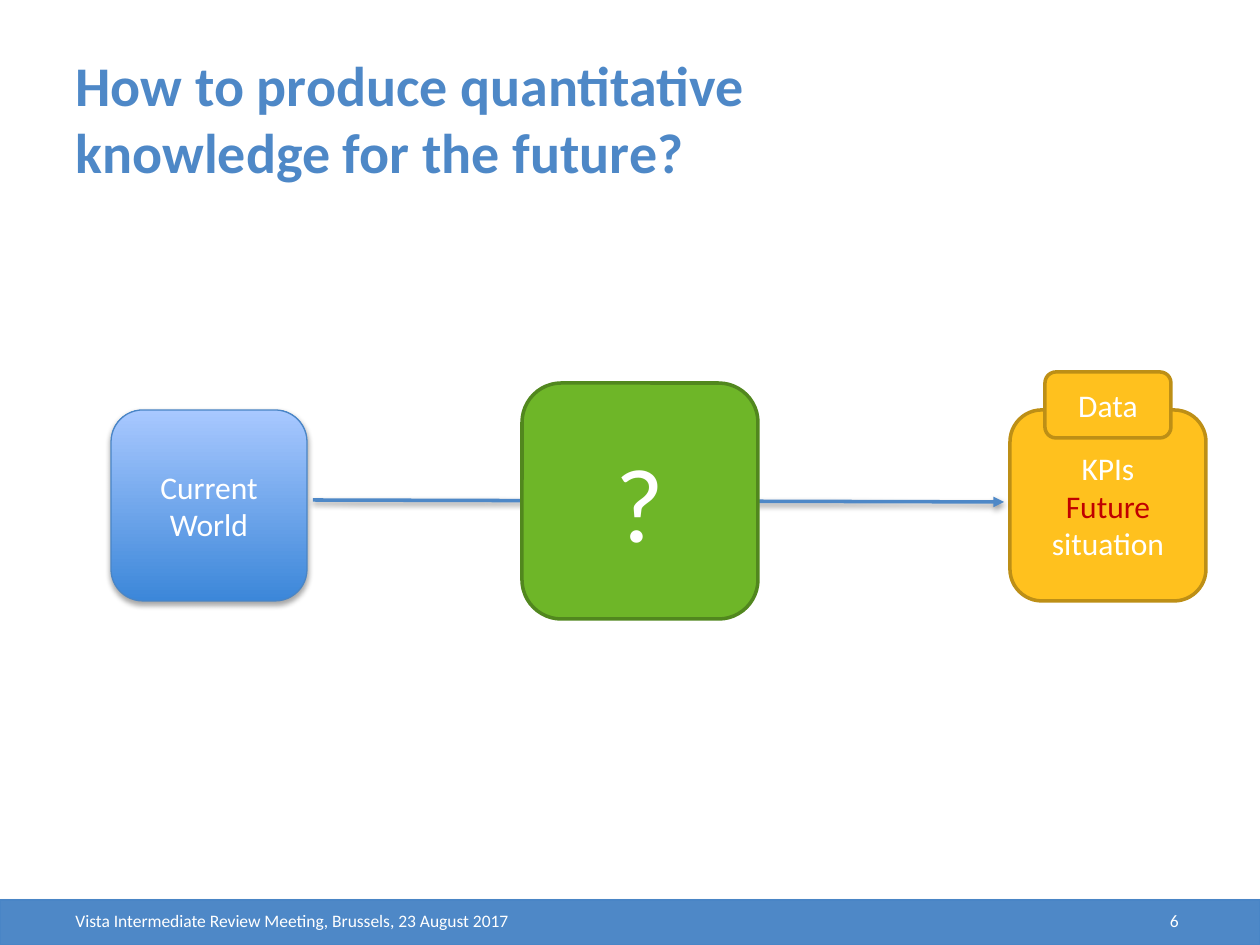
from lxml.etree import SubElement
from pptx import Presentation
from pptx.dml.color import RGBColor
from pptx.enum.shapes import MSO_CONNECTOR, MSO_SHAPE
from pptx.enum.text import MSO_ANCHOR, MSO_AUTO_SIZE, PP_ALIGN
from pptx.oxml.ns import qn
from pptx.util import Pt

PX = 914400 / 126
SLIDE_SIZE = (1260, 945)

THEME = {
    "font": "Calibri",
    "blue": "4E88C7", "blue_edge": "4985C6",
    "sky_bottom": "3C87D9", "sky_top": "A8C8FF",
    "gold": "FFC11E", "gold_edge": "BD8F16",
    "green": "6EB628", "green_edge": "51871E",
    "white": "FFFFFF", "red": "C00000", "black": "000000",
    "title_size": 32, "label_size": 18, "mark_size": 60, "footer_size": 10,
    "thin": 0.75, "thick": 2,
}

TITLE = {"at": (63, 39, 917, 158),
         "lines": [("How to produce quantitative knowledge for the future?", "blue")]}
FOOTER_BAR = {"at": (0, 900, 1260, 45), "fill": ["blue"], "edge": "blue_edge",
              "weight": "thin", "shadow": 35}
FOOTERS = [
    {"at": (63, 903, 537, 36), "align": PP_ALIGN.LEFT,
     "lines": [("Vista Intermediate Review Meeting, Brussels, 23 August 2017", "white")]},
    {"at": (897, 903, 294, 36), "align": PP_ALIGN.RIGHT, "lines": [("6", "white")]},
]
CURRENT_WORLD = {"at": (111, 410, 196, 191), "fill": ["sky_bottom", "sky_top"],
                 "edge": "blue_edge", "weight": "thin", "shadow": 35,
                 "lines": [("Current", "white"), ("World", "white")]}
FUTURE_KPIS = {"at": (1010, 410, 196, 191), "fill": ["gold"], "edge": "gold_edge",
               "lines": [("KPIs", "white"), ("Future", "red"), ("situation", "white")]}
DATA = {"at": (1045, 372, 126, 66), "fill": ["gold"], "edge": "gold_edge",
        "lines": [("Data", "white")]}
UNKNOWN = {"at": (522, 383, 236, 236), "fill": ["green"], "edge": "green_edge",
           "size": "mark_size", "lines": [("?", "white")]}
PATH_TO_FUTURE = (313, 500, 1004, 502)


def emu(lengths):
    return [round(length * PX) for length in lengths]


def color(name):
    return RGBColor.from_string(THEME[name])


def apply(target, values):
    for name, value in values.items():
        setattr(target, name, value)


def write(frame, lines, size, align, bold=False):
    apply(frame, {"word_wrap": True, "auto_size": MSO_AUTO_SIZE.NONE,
                  "vertical_anchor": MSO_ANCHOR.MIDDLE})
    for index, (text, ink) in enumerate(lines):
        paragraph = frame.add_paragraph() if index else frame.paragraphs[0]
        paragraph.alignment = align
        run = paragraph.add_run()
        run.text = text
        apply(run.font, {"name": THEME["font"], "size": Pt(THEME[size]), "bold": bold})
        run.font.color.rgb = color(ink)


def set_shadow(part, opacity, distance):
    """Replace the theme shadow by a soft downward one."""
    properties = part._element.spPr
    effects = properties.find(qn("a:effectLst"))
    if effects is None:
        effects = SubElement(properties, qn("a:effectLst"))
    shadow = SubElement(effects, qn("a:outerShdw"), blurRad=str(Pt(3.1)),
                        dist=str(Pt(distance)), dir="5400000", rotWithShape="0")
    ink = SubElement(shadow, qn("a:srgbClr"), val=THEME["black"])
    SubElement(ink, qn("a:alpha"), val=str(opacity * 1000))


def set_line(line, ink, weight):
    line.color.rgb = color(ink)
    line.width = Pt(THEME[weight])


def add_box(slide, box, preset=MSO_SHAPE.ROUNDED_RECTANGLE):
    shape = slide.shapes.add_shape(preset, *emu(box["at"]))
    if len(box["fill"]) == 1:
        shape.fill.solid()
        shape.fill.fore_color.rgb = color(box["fill"][0])
    else:
        shape.fill.gradient()
        shape.fill.gradient_angle = 90
        for stop, ink in zip(shape.fill.gradient_stops, box["fill"]):
            stop.color.rgb = color(ink)
    set_line(shape.line, box["edge"], box.get("weight", "thick"))
    shape.shadow.inherit = False
    if "shadow" in box:
        set_shadow(shape, box["shadow"], 1.8)
    write(shape.text_frame, box.get("lines", []), box.get("size", "label_size"),
          PP_ALIGN.CENTER)


def add_arrow(slide, ends):
    arrow = slide.shapes.add_connector(MSO_CONNECTOR.STRAIGHT, *emu(ends))
    set_line(arrow.line, "blue", "thick")
    SubElement(arrow.line._get_or_add_ln(), qn("a:tailEnd"), type="triangle")
    set_shadow(arrow, 38, 1.6)


def main():
    deck = Presentation()
    deck.slide_width, deck.slide_height = emu(SLIDE_SIZE)
    slide = deck.slides.add_slide(deck.slide_layouts[5])

    title = slide.shapes.title
    apply(title, dict(zip(("left", "top", "width", "height"), emu(TITLE["at"]))))
    write(title.text_frame, TITLE["lines"], "title_size", PP_ALIGN.LEFT, bold=True)

    add_box(slide, FOOTER_BAR, MSO_SHAPE.RECTANGLE)
    for footer in FOOTERS:
        label = slide.shapes.add_textbox(*emu(footer["at"]))
        write(label.text_frame, footer["lines"], "footer_size", footer["align"])

    add_box(slide, CURRENT_WORLD)
    add_box(slide, FUTURE_KPIS)
    add_arrow(slide, PATH_TO_FUTURE)
    add_box(slide, DATA)
    add_box(slide, UNKNOWN)
    deck.save("out.pptx")


if __name__ == "__main__":
    main()
